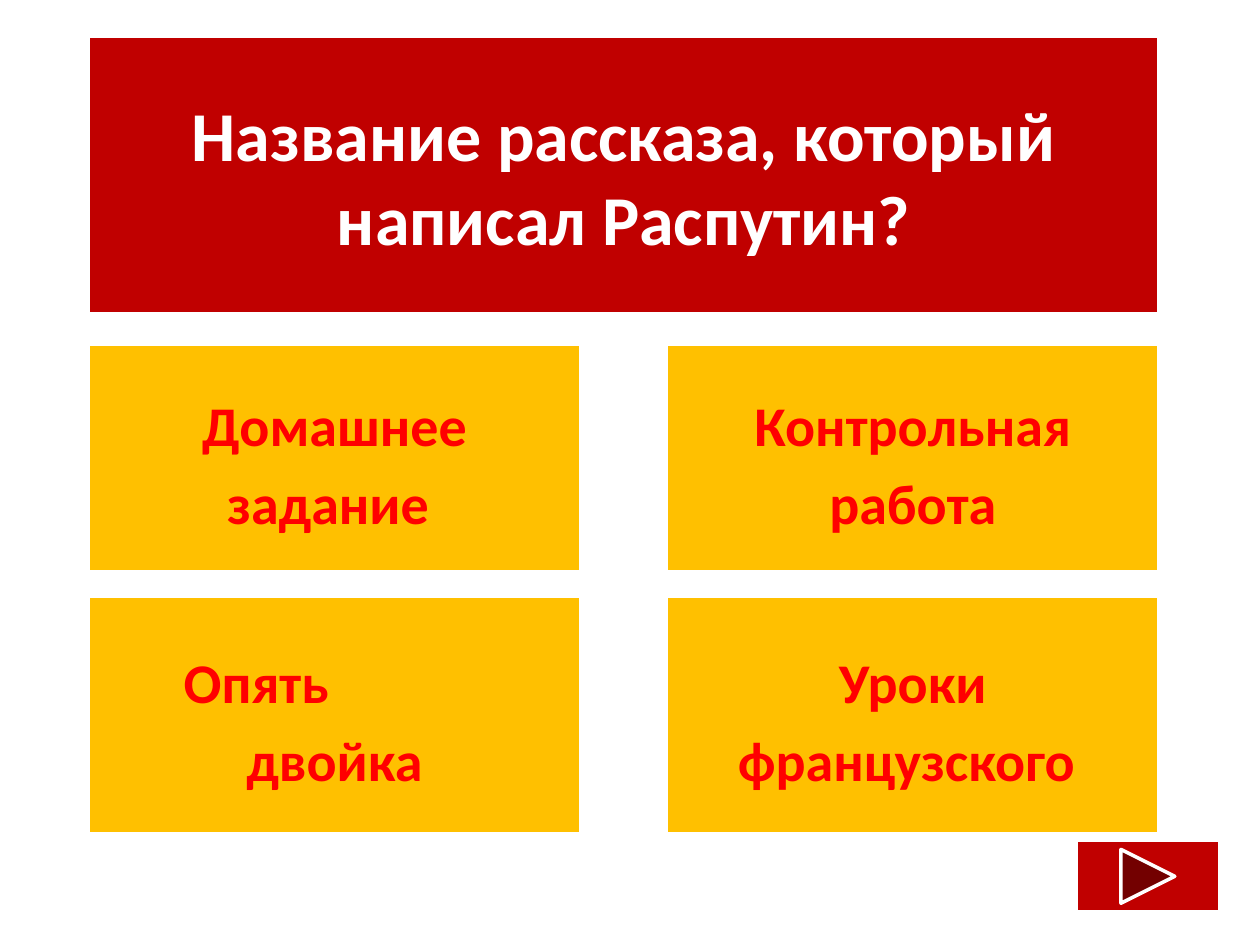
from pptx import Presentation
from pptx.dml.color import RGBColor as RGB
from pptx.enum.shapes import MSO_SHAPE as Shape
from pptx.enum.text import MSO_ANCHOR as Anchor, MSO_AUTO_SIZE as Fit, PP_ALIGN as Align
from pptx.util import Inches, Pt

COLORS = {"red": "C00000", "gold": "FFC000", "text": "FF0000", "white": "FFFFFF"}


def paint(shape, fill):
    shape.fill.solid()
    shape.fill.fore_color.rgb = RGB.from_string(COLORS[fill])
    shape.line.color.rgb = RGB.from_string(COLORS["white"])
    shape.line.width = Pt(2)


def style(para, size, color):
    para.alignment = Align.CENTER
    for run in para.runs:
        run.font.name = "Calibri"
        run.font.size = Pt(size)
        run.font.bold = True
        run.font.color.rgb = RGB.from_string(COLORS[color])


prs = Presentation()
prs.slide_width, prs.slide_height = Inches(10), Inches(7.5)
slide = prs.slides.add_slide(prs.slide_layouts[5])

# Question
title = slide.shapes.title
title.left, title.top = Inches(0.7), Inches(0.29)
title.width, title.height = Inches(8.5), Inches(2.2)
paint(title, "red")
frame = title.text_frame
frame.text = "Название рассказа, который написал Распутин?"
frame.auto_size = Fit.NONE
frame.vertical_anchor = Anchor.MIDDLE
style(frame.paragraphs[0], 40, "white")

# Answers, two by two
rows = [
    (2.73, 1.81, ["Домашнее задание ", "Контрольная работа"]),
    (4.73, 1.89, ["Опять\nдвойка", "Уроки французского "]),
]
for top, high, words in rows:
    for left, text in zip((0.7, 5.29), words):
        box = slide.shapes.add_shape(
            Shape.RECTANGLE, Inches(left), Inches(top), Inches(3.91), Inches(high))
        box.shadow.inherit = False
        paint(box, "gold")
        frame = box.text_frame
        frame.word_wrap = True
        frame.vertical_anchor = Anchor.MIDDLE
        frame.text = text
        for para in frame.paragraphs:
            style(para, 32, "text")
            para.line_spacing = 1.15
        para.space_after = Pt(10)
        # The first line of a split answer stands to the left
        if len(frame.paragraphs) > 1:
            first = frame.paragraphs[0]
            first.alignment = Align.LEFT
            first.space_after = Pt(0)
            first._p.get_or_add_pPr().set("marL", str(Inches(0.66)))

# Next button
button = slide.shapes.add_shape(
    Shape.ACTION_BUTTON_FORWARD_OR_NEXT,
    Inches(8.54), Inches(6.67), Inches(1.14), Inches(0.57))
button.shadow.inherit = False
paint(button, "red")

prs.save("out.pptx")
